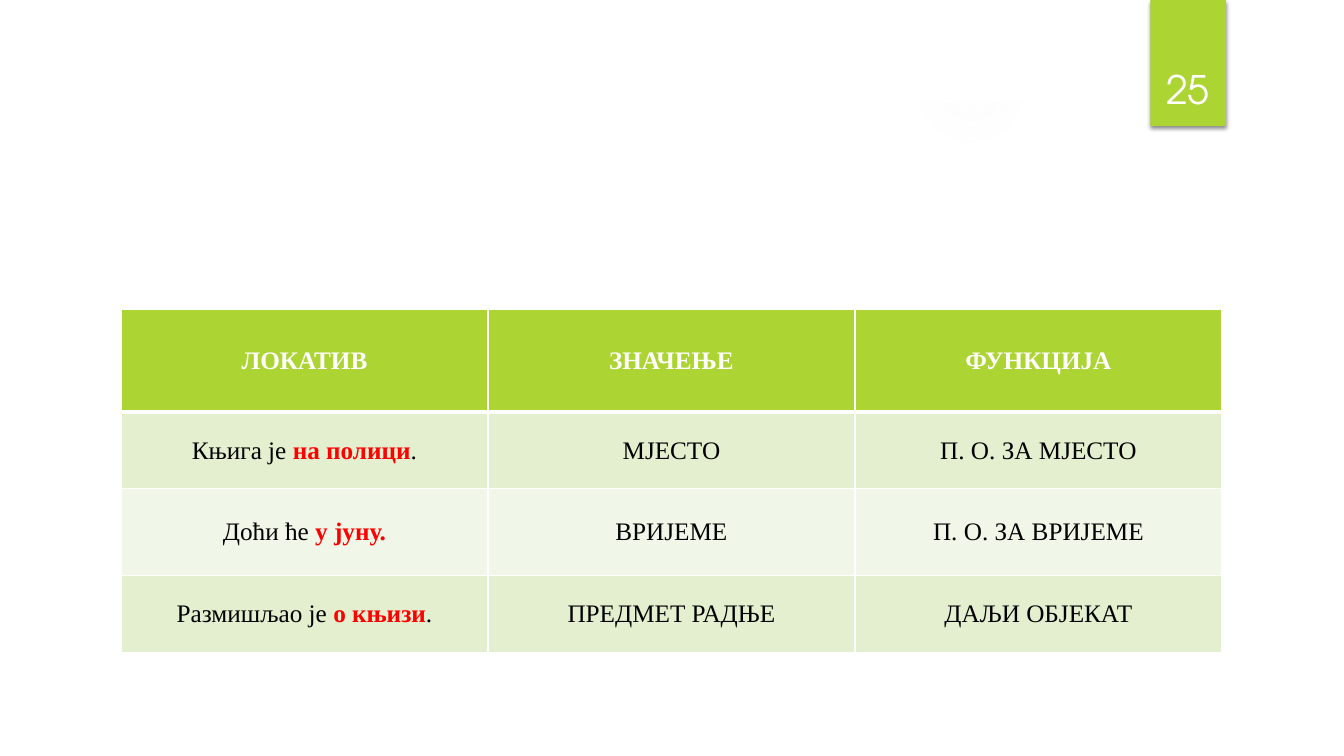
from lxml.etree import SubElement
from pptx import Presentation
from pptx.dml.color import RGBColor
from pptx.enum.shapes import MSO_SHAPE as Shape
from pptx.enum.text import MSO_ANCHOR as Anchor, PP_ALIGN as Align
from pptx.oxml.ns import qn
from pptx.util import Inches, Pt

COLORS = {"green": "ACD433", "light": "E3EFCE", "pale": "F1F7E8", "glow": "F7F7F7",
          "white": "FFFFFF", "black": "000000", "red": "FF0000"}
PAGE_NUMBER = "25"
HEADINGS = ["ЛОКАТИВ", "ЗНАЧЕЊЕ", "ФУНКЦИЈА"]
EXAMPLES = [
    (("Књига је ", "на полици", "."), "МЈЕСТО", "П. О. ЗА МЈЕСТО"),
    (("Доћи ће ", "у јуну.", ""), "ВРИЈЕМЕ", "П. О. ЗА ВРИЈЕМЕ"),
    (("Размишљао је ", "о књизи", "."), "ПРЕДМЕТ РАДЊЕ", "ДАЉИ ОБЈЕКАТ"),
]
ROW_HEIGHTS = [1.02, 0.76, 0.86, 0.76]
COLUMN_WIDTH = 3.64
GLOWS = [
    (0, 2.92, 4.58, ((0, 11), (36, 10), (75, 0))),
    (0, 3.17, 2.58, ((0, 8), (36, 8), (72, 0))),
    (9.41, 1.83, 3.08, ((0, 7), (36, 6), (69, 0))),
    (8.75, 0, 1.75, ((0, 14), (36, 7), (73, 0))),
    (9.41, 6.42, 1.08, ((0, 14), (36, 7), (66, 0))),
]
FOLD = [(9.34, 2.5), (10.2, 2.46), (11.5, 2.33), (12.89, 2.14), (12.83, 1.66), (12.36, 1.81),
        (11.9, 1.94), (11.44, 2.06), (10.98, 2.16), (10.53, 2.25), (10.1, 2.32),
        (9.69, 2.38), (9.3, 2.43)]
PANEL = [(0.5, 2.04), (0.5, 7), (12.84, 7), (12.84, 2.04), (12, 2.17), (11.16, 2.27),
         (10.32, 2.35), (9.49, 2.41), (8.67, 2.45), (7.86, 2.47), (7.08, 2.48), (6.32, 2.47),
         (5.35, 2.45), (4.44, 2.41), (3.6, 2.36), (2.83, 2.3), (1.87, 2.21), (1.13, 2.12)]
OUTER_EDGE = [(0, 0), (0, 7.5), (13.33, 7.5), (13.33, 0)]
INNER_EDGE = [(12.81, 6.98), (12.81, 0.52), (0.52, 0.52), (0.52, 6.98)][::-1]


def rgb(name):
    return RGBColor.from_string(COLORS[name])


def add_run(paragraph, text, font, size, color, bold=False):
    paragraph.alignment = Align.CENTER
    run = paragraph.add_run()
    run.text = text
    run.font.name, run.font.size, run.font.bold = font, Pt(size), bold
    run.font.color.rgb = rgb(color)


def add_alpha(color, percent):
    SubElement(color, qn("a:alpha"), val=str(percent * 1000))


def add_glow(slide, left, top, size, stops):
    glow = slide.shapes.add_shape(Shape.OVAL, Inches(left), Inches(top), Inches(size), Inches(size))
    glow.line.fill.background()
    glow.shadow.inherit = False
    glow.fill.gradient()
    gradient = glow._element.spPr.find(qn("a:gradFill"))
    for child in list(gradient):
        gradient.remove(child)
    stop_list = SubElement(gradient, qn("a:gsLst"))
    for position, opacity in stops:
        stop = SubElement(stop_list, qn("a:gs"), pos=str(position * 1000))
        add_alpha(SubElement(stop, qn("a:srgbClr"), val=COLORS["glow"]), opacity)
    radial = SubElement(gradient, qn("a:path"), {"path": "circle"})
    SubElement(radial, qn("a:fillToRect"), {side: "50000" for side in "ltrb"})


def add_white_outline(slide, *contours):
    builder = None
    for contour in contours:
        (x, y), *others = contour
        if builder is None:
            builder = slide.shapes.build_freeform(x, y, scale=Inches(1))
        else:
            builder.move_to(x, y)
        builder.add_line_segments(others, close=True)
    outline = builder.convert_to_shape()
    outline.fill.solid()
    outline.fill.fore_color.rgb = rgb("white")
    outline.line.fill.background()
    outline.shadow.inherit = False
    return outline


def add_backdrop(slide):
    for glow in GLOWS:
        add_glow(slide, *glow)
    fold = add_white_outline(slide, FOLD)
    fold.rotation = 350.2
    add_alpha(fold._element.spPr.find(qn("a:solidFill"))[0], 20)
    add_white_outline(slide, PANEL)
    add_white_outline(slide, OUTER_EDGE, INNER_EDGE[::-1])


def add_borders(cell, bottom):
    properties = cell._tc.get_or_add_tcPr()
    for side, width in (("L", 1), ("R", 1), ("T", 1), ("B", bottom)):
        line = SubElement(properties, qn(f"a:ln{side}"), w=str(Pt(width)))
        SubElement(SubElement(line, qn("a:solidFill")), qn("a:srgbClr"), val=COLORS["white"])


def add_page_tab(slide):
    tab = slide.shapes.add_shape(Shape.RECTANGLE, Inches(11.41), 0, Inches(0.75), Inches(1.25))
    tab.fill.solid()
    tab.fill.fore_color.rgb = rgb("green")
    tab.line.fill.background()
    tab.shadow.inherit = False
    effects = tab._element.spPr.find(qn("a:effectLst"))
    shadow = SubElement(effects, qn("a:outerShdw"), blurRad=str(Pt(3)), dist=str(Pt(2)),
                        dir="5400000", rotWithShape="0")
    add_alpha(SubElement(shadow, qn("a:srgbClr"), val=COLORS["black"]), 45)
    number = slide.shapes.add_textbox(Inches(11.32), Inches(0.32), Inches(0.92), Inches(0.84))
    number.text_frame.word_wrap = True
    number.text_frame.vertical_anchor = Anchor.BOTTOM
    add_run(number.text_frame.paragraphs[0], PAGE_NUMBER, "TeX Gyre Adventor", 28, "white")


def add_case_table(slide):
    rows = [HEADINGS, *EXAMPLES]
    table = slide.shapes.add_table(
        len(rows), len(HEADINGS), Inches(1.2), Inches(3.07),
        Inches(COLUMN_WIDTH * len(HEADINGS)), Inches(sum(ROW_HEIGHTS))).table
    for column in table.columns:
        column.width = Inches(COLUMN_WIDTH)
    for r, (entries, height) in enumerate(zip(rows, ROW_HEIGHTS)):
        table.rows[r].height = Inches(height)
        heading = r == 0
        fill = "green" if heading else "light" if r % 2 else "pale"
        for c, entry in enumerate(entries):
            cell = table.cell(r, c)
            add_borders(cell, 3 if heading else 1)
            cell.fill.solid()
            cell.fill.fore_color.rgb = rgb(fill)
            cell.vertical_anchor = Anchor.MIDDLE
            parts = (entry,) if isinstance(entry, str) else entry
            for i, part in enumerate(parts):
                if part:
                    locative = i == 1
                    color = "white" if heading else "red" if locative else "black"
                    add_run(cell.text_frame.paragraphs[0], part, "Times New Roman", 18,
                            color, heading or locative)


def main():
    """Build the slide on the meanings and functions of the locative."""
    deck = Presentation()
    deck.slide_width, deck.slide_height = Inches(13.33), Inches(7.5)
    slide = deck.slides.add_slide(deck.slide_layouts[6])
    add_backdrop(slide)
    add_page_tab(slide)
    add_case_table(slide)
    deck.save("out.pptx")


if __name__ == "__main__":
    main()
